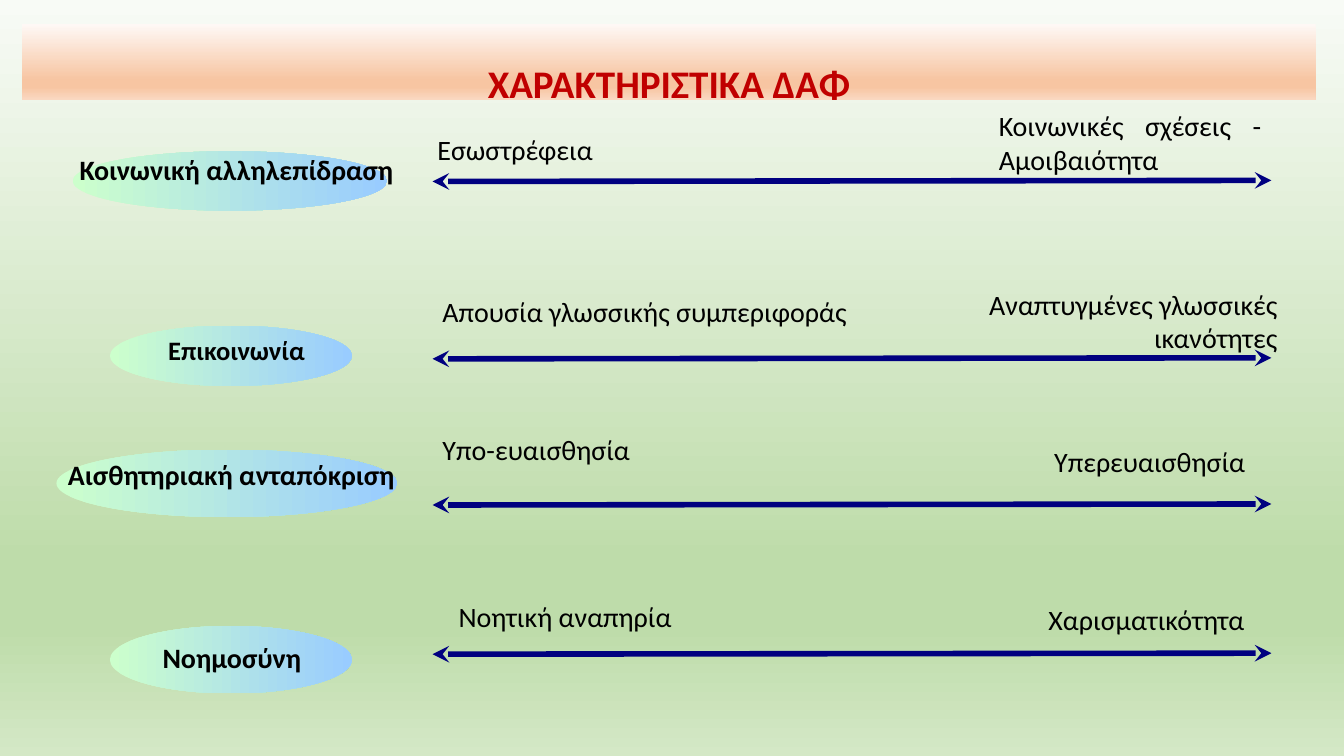
"""Build the slide on the characteristics of ASD as four two-ended scales."""
from lxml import etree
from pptx import Presentation
from pptx.dml.color import RGBColor
from pptx.enum.shapes import MSO_CONNECTOR, MSO_SHAPE
from pptx.enum.text import MSO_ANCHOR, PP_ALIGN
from pptx.oxml.ns import qn
from pptx.util import Inches, Pt

LEFT, CENTER = PP_ALIGN.LEFT, PP_ALIGN.CENTER
RIGHT, JUSTIFY = PP_ALIGN.RIGHT, PP_ALIGN.JUSTIFY
OVAL, STRAIGHT = MSO_SHAPE.OVAL, MSO_CONNECTOR.STRAIGHT
BOTTOM = MSO_ANCHOR.BOTTOM

FONT = "Calibri"
COLORS = {"title": "C00000", "text": "000000", "arrow": "000080"}
GRADIENTS = {
    "background": (90, [(0, "F8FBF6"), (74, "BEDCAA"), (83, "BEDCAA"), (100, "D4E8C6")]),
    "banner": (90, [(0, "FEF8F5"), (74, "F7C5A2"), (83, "F7C5A2"), (100, "FAD8C1")]),
    "oval": (0, [(0, "CCFFCC"), (100, "99CCFF")]),
}
TITLE = "ΧΑΡΑΚΤΗΡΙΣΤΙΚΑ ΔΑΦ"
TITLE_BOX = (0.22, 0.24, 12.83, 0.75)
ARROW_LEFT, ARROW_RIGHT, ARROW_RISE = 4.29, 12.61, 0.01

SCALES = [
    {"arrow_y": 1.79, "oval": (0.72, 1.5, 3.12, 0.59),
     "domain": ("Κοινωνική αλληλεπίδραση", (0.44, 1.46, 3.81, 0.73), 20),
     "low": ("Εσωστρέφεια", (4.24, 1.27, 2.8, 0.47)),
     "high": ("Κοινωνικές σχέσεις - Αμοιβαιότητα", (9.81, 1.03, 2.8, 0.66), JUSTIFY)},
    {"arrow_y": 3.55, "oval": (1.09, 3.23, 2.4, 0.6),
     "domain": ("Επικοινωνία", (1, 3.26, 2.69, 0.6), 19),
     "low": ("Απουσία γλωσσικής συμπεριφοράς", (4.29, 2.87, 4.25, 0.58)),
     "high": ("Αναπτυγμένες γλωσσικές\nικανότητες", (9.67, 2.8, 3.1, 0.61), RIGHT)},
    {"arrow_y": 5, "oval": (0.56, 4.46, 3.38, 0.67),
     "domain": ("Αισθητηριακή ανταπόκριση", (0.34, 4.49, 3.91, 0.8), 20),
     "low": ("Υπο-ευαισθησία", (4.29, 4.24, 2.91, 0.78)),
     "high": ("Υπερευαισθησία", (9.59, 4.36, 2.86, 0.78), RIGHT)},
    {"arrow_y": 6.48, "oval": (1.09, 6.21, 2.4, 0.67),
     "domain": ("Νοημοσύνη", (1.11, 6.31, 2.38, 0.47), 20),
     "low": ("Νοητική αναπηρία", (4.45, 5.9, 3.7, 0.8)),
     "high": ("Χαρισματικότητα", (9.37, 5.93, 3.07, 0.55), RIGHT)},
]


def set_all(target, values):
    for name, value in values.items():
        setattr(target, name, value)


def paint(fill, owner, gradient):
    angle, stops = GRADIENTS[gradient]
    fill.gradient()
    grad = owner.find(".//" + qn("a:gradFill"))
    for child in list(grad):
        grad.remove(child)
    stop_list = etree.SubElement(grad, qn("a:gsLst"))
    for position, color in stops:
        stop = etree.SubElement(stop_list, qn("a:gs"), pos=str(position * 1000))
        etree.SubElement(stop, qn("a:srgbClr"), val=color)
    etree.SubElement(grad, qn("a:lin"), ang=str(angle * 60000), scaled="0")


def write(frame, text, align, size, color="text", bold=False):
    frame.word_wrap = True
    frame.text = text
    for paragraph in frame.paragraphs:
        paragraph.alignment = align
        for run in paragraph.runs:
            set_all(run.font, {"name": FONT, "size": Pt(size), "bold": bold})
            run.font.color.rgb = RGBColor.from_string(COLORS[color])


def add_label(slide, text, box, align, size=20, bold=False):
    label = slide.shapes.add_textbox(*map(Inches, box))
    write(label.text_frame, text, align, size, bold=bold)


def add_oval(slide, box):
    oval = slide.shapes.add_shape(OVAL, *map(Inches, box))
    oval.shadow.inherit = False
    oval.line.fill.background()
    paint(oval.fill, oval._element, "oval")


def add_arrow(slide, y):
    ends = (ARROW_RIGHT, y, ARROW_LEFT, y + ARROW_RISE)
    arrow = slide.shapes.add_connector(STRAIGHT, *map(Inches, ends))
    arrow.line.width = Pt(4)
    arrow.line.color.rgb = RGBColor.from_string(COLORS["arrow"])
    properties = arrow._element.spPr
    for end in ("a:headEnd", "a:tailEnd"):
        etree.SubElement(properties.find(qn("a:ln")), qn(end), type="stealth")
    etree.SubElement(properties, qn("a:effectLst"))


def add_title(slide):
    title = slide.shapes.title
    set_all(title, dict(zip(("left", "top", "width", "height"), map(Inches, TITLE_BOX))))
    paint(title.fill, title._element, "banner")
    frame = title.text_frame
    write(frame, TITLE, CENTER, 27.9, "title", bold=True)
    set_all(frame, {"vertical_anchor": BOTTOM, "margin_bottom": Inches(-0.07)})
    frame.paragraphs[0].line_spacing = 0.9


def main():
    deck = Presentation()
    set_all(deck, {"slide_width": Inches(13.33), "slide_height": Inches(7.5)})
    slide = deck.slides.add_slide(deck.slide_layouts[5])
    paint(slide.background.fill, slide._element, "background")
    add_title(slide)
    for scale in SCALES:
        add_oval(slide, scale["oval"])
        add_arrow(slide, scale["arrow_y"])
        domain, box, size = scale["domain"]
        add_label(slide, domain, box, CENTER, size, bold=True)
        add_label(slide, *scale["low"], LEFT)
        add_label(slide, *scale["high"])
    deck.save("out.pptx")


if __name__ == "__main__":
    main()
